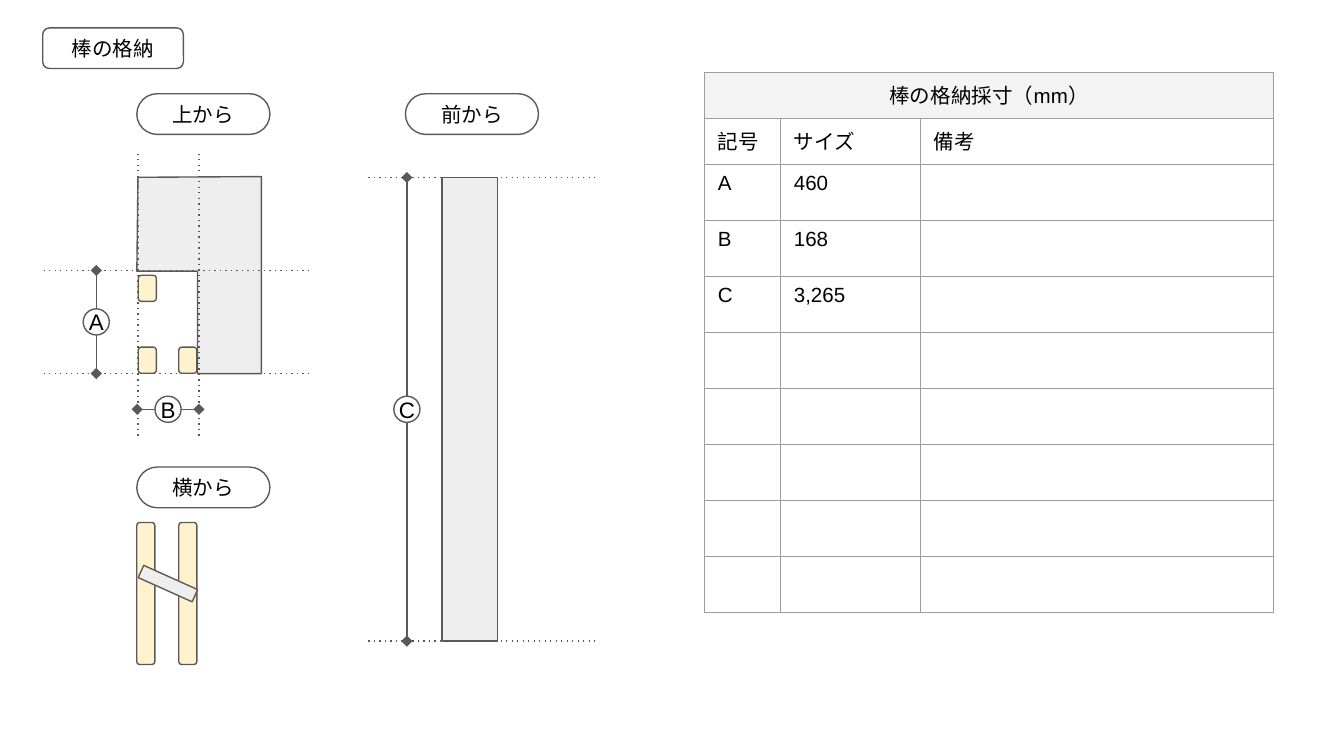
"""Build the rod storage measurement slide: three views, dimensions and a size table."""
from lxml import etree
from pptx import Presentation
from pptx.dml.color import RGBColor
from pptx.enum.shapes import MSO_CONNECTOR, MSO_SHAPE
from pptx.enum.text import MSO_ANCHOR, PP_ALIGN
from pptx.oxml.ns import qn
from pptx.util import Pt

RECT, ROUNDED, OVAL = MSO_SHAPE.RECTANGLE, MSO_SHAPE.ROUNDED_RECTANGLE, MSO_SHAPE.OVAL
STRAIGHT = MSO_CONNECTOR.STRAIGHT
MIDDLE, CENTER, LEFT = MSO_ANCHOR.MIDDLE, PP_ALIGN.CENTER, PP_ALIGN.LEFT
BLACK = RGBColor(0x00, 0x00, 0x00)
WHITE = RGBColor(0xFF, 0xFF, 0xFF)
OUTLINE = RGBColor(0x59, 0x59, 0x59)
ROD_GREY = RGBColor(0xEE, 0xEE, 0xEE)
POST_CREAM = RGBColor(0xFF, 0xF2, 0xCC)
HEADER_GREY = RGBColor(0xF3, 0xF3, 0xF3)
BORDER_GREY = RGBColor(0x9E, 0x9E, 0x9E)
FONT = "Arial"
CORNER = 0.167


class Drawing:
    """Hold the drawing style and the current slide."""

    def __init__(self, slide):
        self.shapes = slide.shapes
        self.width = Pt(0.75)

    def style(self, shape, fill):
        shape.shadow.inherit = False
        shape.fill.solid()
        shape.fill.fore_color.rgb = fill
        shape.line.color.rgb = OUTLINE
        shape.line.width = self.width

    def set_text(self, frame, text, size, align):
        frame.text = text
        paragraph = frame.paragraphs[0]
        paragraph.alignment = align
        for run in paragraph.runs:
            run.font.size = Pt(size)
            run.font.name = FONT
            run.font.color.rgb = BLACK

    def box(self, kind, left, top, width, height, fill, corner=None, rotation=0):
        shape = self.shapes.add_shape(kind, Pt(left), Pt(top), Pt(width), Pt(height))
        self.style(shape, fill)
        shape.rotation = rotation
        if corner is not None:
            shape.adjustments[0] = corner
        return shape

    def label(self, kind, left, top, width, height, text, size, inset, corner=None):
        frame = self.box(kind, left, top, width, height, WHITE, corner).text_frame
        frame.margin_left = frame.margin_right = Pt(inset)
        frame.margin_top = frame.margin_bottom = Pt(inset)
        frame.vertical_anchor = MIDDLE
        frame.word_wrap = True
        self.set_text(frame, text, size, CENTER)

    def view_title(self, left, top, text):
        self.label(ROUNDED, left, top, 71.3, 21.8, text, 11, 7.2, 0.5)

    def post(self, left, top, height):
        self.box(ROUNDED, left, top, 9.7, height, POST_CREAM, CORNER)

    def outline(self, points, fill):
        corners = [(Pt(x), Pt(y)) for x, y in points]
        builder = self.shapes.build_freeform(*corners[0])
        builder.add_line_segments(corners[1:], close=True)
        self.style(builder.convert_to_shape(), fill)

    def line(self, x1, y1, x2, y2, **details):
        line = self.shapes.add_connector(STRAIGHT, Pt(x1), Pt(y1), Pt(x2), Pt(y2))
        line.line.color.rgb = OUTLINE
        line.line.width = self.width
        properties = line.element.spPr
        stroke = properties.find(qn("a:ln"))
        for tag, value in details.items():
            key = "val" if tag == "prstDash" else "type"
            etree.SubElement(stroke, qn(f"a:{tag}")).set(key, value)
        etree.SubElement(properties, qn("a:effectLst"))

    def guide(self, x1, y1, x2, y2):
        self.line(x1, y1, x2, y2, prstDash="dot")

    def dimension(self, x1, y1, x2, y2, symbol):
        self.line(x1, y1, x2, y2, headEnd="diamond", tailEnd="diamond")
        diameter = 14
        left, top = (x1 + x2 - diameter) / 2, (y1 + y2 - diameter) / 2
        self.label(OVAL, left, top, diameter, diameter, symbol, 12, 0)

    def cell(self, cell, text, fill, align):
        properties = cell._tc.get_or_add_tcPr()
        for side in ("lnL", "lnR", "lnT", "lnB"):
            border = etree.SubElement(properties, qn(f"a:{side}"), w=str(int(self.width)))
            paint = etree.SubElement(border, qn("a:solidFill"))
            etree.SubElement(paint, qn("a:srgbClr"), val=str(BORDER_GREY))
        if fill is None:
            cell.fill.background()
        else:
            cell.fill.solid()
            cell.fill.fore_color.rgb = fill
        cell.margin_left = cell.margin_right = Pt(7.2)
        cell.margin_top = cell.margin_bottom = Pt(4)
        if text:
            self.set_text(cell.text_frame, text, 11, align)

    def table(self, left, top, widths, heights, rows):
        frame = self.shapes.add_table(len(heights), len(widths), Pt(left), Pt(top),
                                      Pt(sum(widths)), Pt(sum(heights)))
        table = frame.table
        table.first_row = table.horz_banding = False
        for column, width in zip(table.columns, widths):
            column.width = Pt(width)
        for row, height in zip(table.rows, heights):
            row.height = Pt(height)
        table.cell(0, 0).merge(table.cell(0, len(widths) - 1))
        for r, texts in enumerate(rows):
            fill, align = (HEADER_GREY, CENTER) if r == 0 else (None, LEFT)
            for c, text in enumerate(texts):
                self.cell(table.cell(r, c), text, fill, align)


def main():
    presentation = Presentation()
    presentation.slide_width, presentation.slide_height = Pt(720), Pt(405)
    drawing = Drawing(presentation.slides.add_slide(presentation.slide_layouts[6]))

    measurements = [
        ("棒の格納採寸（mm）", "", ""),
        ("記号", "サイズ", "備考"),
        ("A", "460", ""),
        ("B", "168", ""),
        ("C", "3,265", ""),
    ] + [("", "", "")] * 5
    drawing.table(377.4, 38.7, [40.7, 75, 189.2], [24.7] * 2 + [28.65] * 8, measurements)

    drawing.label(ROUNDED, 22.9, 14.9, 75.4, 21.8, "棒の格納", 11, 7.2, CORNER)

    rod_top, rod_bottom = 95.1, 343.5
    notch_left, notch_right, notch_top, notch_bottom = 73.9, 106.6, 144.9, 200.1
    drawing.outline([(73.9, 95), (73.3, 145.3), (105.8, 145.3),
                     (105.8, 200.2), (140, 200.2), (140, 94.6)], ROD_GREY)
    drawing.box(RECT, 236.9, rod_top, 29.6, rod_bottom - rod_top, ROD_GREY)
    drawing.view_title(73.3, 50.2, "上から")
    drawing.view_title(217.2, 50.2, "前から")

    for x in (notch_left, notch_right):
        drawing.guide(x, 82.3, x, 234)
    for y in (notch_top, notch_bottom):
        drawing.guide(165.6, y, 23, y)
    drawing.dimension(51.6, notch_top, 51.6, notch_bottom, "A")
    drawing.dimension(notch_right, 219.3, 73.5, 219.3, "B")
    for y in (rod_top, rod_bottom):
        drawing.guide(319, y, 196.8, y)
    drawing.dimension(218, rod_top, 218, rod_bottom, "C")

    for left, top in ((74.1, 147.5), (74.1, 186), (95.8, 186)):
        drawing.post(left, top, 14)
    for left in (73.3, 95.8):
        drawing.post(left, 279.9, 76.1)
    drawing.box(RECT, 86.4, 296.8, 7.2, 31.7, ROD_GREY, rotation=294.2)
    drawing.view_title(73.3, 250.2, "横から")

    presentation.save("out.pptx")


if __name__ == "__main__":
    main()
